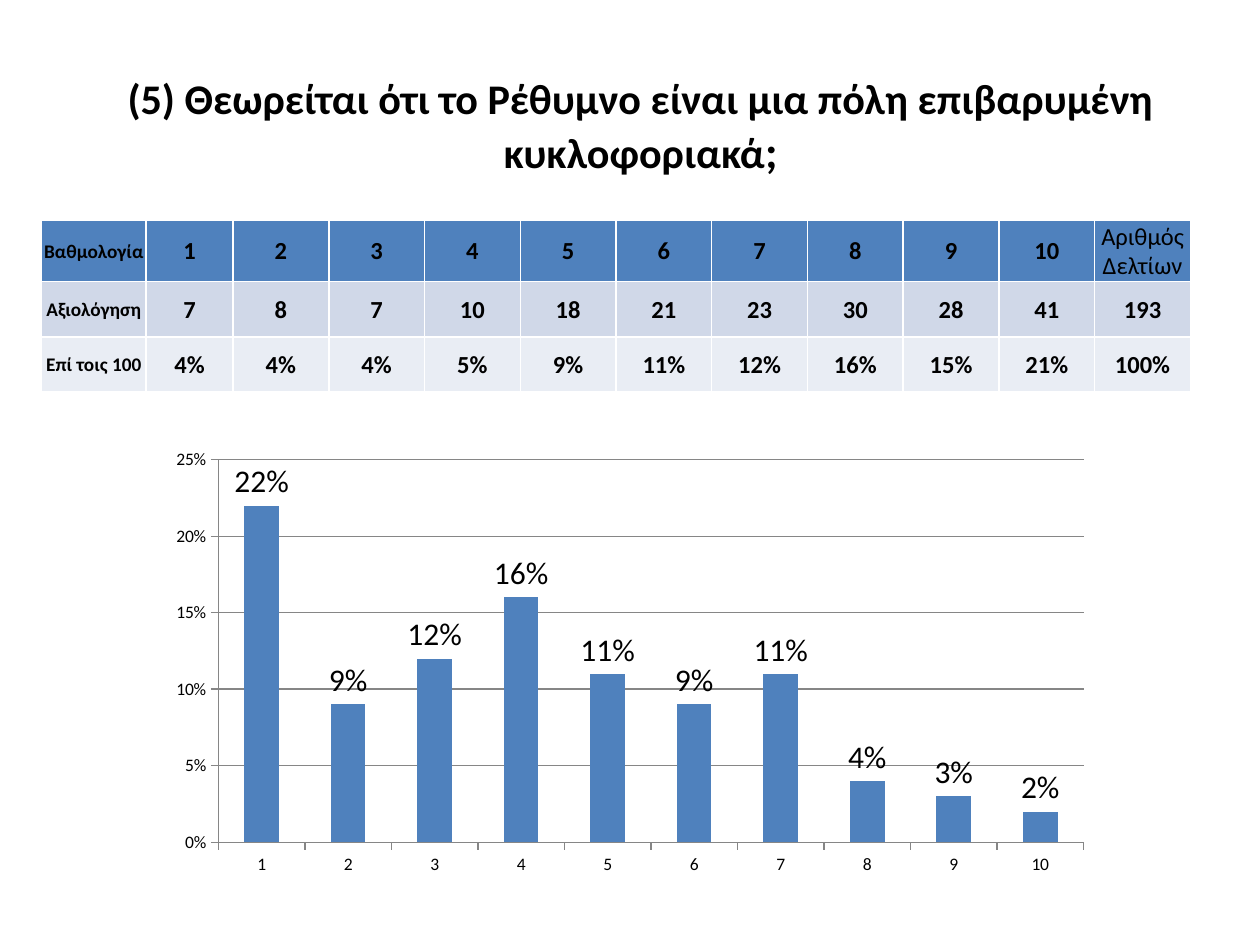
from dataclasses import dataclass

from pptx import Presentation
from pptx.chart.data import CategoryChartData
from pptx.dml.color import RGBColor
from pptx.enum.chart import XL_CHART_TYPE, XL_LABEL_POSITION, XL_TICK_MARK
from pptx.enum.text import MSO_ANCHOR, PP_ALIGN
from pptx.util import Inches, Pt

CENTER = PP_ALIGN.CENTER
MIDDLE = MSO_ANCHOR.MIDDLE
COLUMNS = XL_CHART_TYPE.COLUMN_CLUSTERED
OUTSIDE = XL_TICK_MARK.OUTSIDE
ABOVE = XL_LABEL_POSITION.OUTSIDE_END


@dataclass(frozen=True)
class Theme:
    """Colours, font and type sizes of the slide."""
    font: str = "Calibri"
    ink: RGBColor = RGBColor(0, 0, 0)
    blue: RGBColor = RGBColor(0x4F, 0x81, 0xBD)
    grey: RGBColor = RGBColor(0x86, 0x86, 0x86)
    bands: tuple = (blue, RGBColor(0xD0, 0xD8, 0xE8), RGBColor(0xE9, 0xED, 0xF4))
    title: float = 24.1
    mark: float = 25.9
    head: float = 11
    cell: float = 14
    axis: float = 10
    label: float = 18


THEME = Theme()
TITLE = "(5) Θεωρείται ότι το Ρέθυμνο είναι μια πόλη επιβαρυμένη κυκλοφοριακά"
SCORES = [str(n) for n in range(1, 11)]
ROWS = [
    ["Βαθμολογία", *SCORES, "Αριθμός Δελτίων"],
    ["Αξιολόγηση", "7", "8", "7", "10", "18", "21", "23", "30", "28", "41", "193"],
    ["Επί τοις 100", "4%", "4%", "4%", "5%", "9%", "11%", "12%", "16%", "15%",
     "21%", "100%"],
]
WIDTHS = [0.83, 0.69] + [0.76] * 10
SHARES = [0.22, 0.09, 0.12, 0.16, 0.11, 0.09, 0.11, 0.04, 0.03, 0.02]


def style(font, size, bold=False):
    """Give a font the theme's face and ink."""
    font.name = THEME.font
    font.size = Pt(size)
    font.bold = bold
    font.color.rgb = THEME.ink


def add_title(slide, box):
    """Place the question in the title placeholder."""
    title = slide.shapes.title
    title.left, title.top, title.width, title.height = map(Inches, box)
    frame = title.text_frame
    frame.word_wrap = True
    frame.vertical_anchor = MIDDLE
    frame.text = TITLE
    para = frame.paragraphs[0]
    para.alignment = CENTER
    para.add_run().text = ";"
    for run, size in zip(para.runs, (THEME.title, THEME.mark)):
        style(run.font, size, True)


def fill_cell(cell, text, fill, size, bold):
    """Write one centred cell on its band colour."""
    cell.fill.solid()
    cell.fill.fore_color.rgb = fill
    cell.vertical_anchor = MIDDLE
    cell.margin_left = cell.margin_right = cell.margin_top = Inches(0.01)
    cell.margin_bottom = 0
    cell.text = text
    para = cell.text_frame.paragraphs[0]
    para.alignment = CENTER
    style(para.runs[0].font, size, bold)


def add_grid(slide, box):
    """Place the table of scores."""
    grid = slide.shapes.add_table(len(ROWS), len(WIDTHS), *map(Inches, box)).table
    for col, width in zip(grid.columns, WIDTHS):
        col.width = Inches(width)
    last = len(WIDTHS) - 1
    for r, (row, fill) in enumerate(zip(ROWS, THEME.bands)):
        for c, text in enumerate(row):
            size = THEME.cell if c else THEME.head
            fill_cell(grid.cell(r, c), text, fill, size, (r, c) != (0, last))


def add_bars(slide, box):
    """Place the column chart of shares."""
    data = CategoryChartData(number_format="0%")
    data.categories = SCORES
    data.add_series("Series 1", SHARES)
    chart = slide.shapes.add_chart(COLUMNS, *map(Inches, box), data).chart
    chart.has_legend = False
    chart.has_title = False
    style(chart.font, THEME.axis)
    for axis in (chart.category_axis, chart.value_axis):
        axis.major_tick_mark = OUTSIDE
        axis.format.line.color.rgb = THEME.grey
    scale = chart.value_axis
    scale.minimum_scale, scale.maximum_scale, scale.major_unit = 0, 0.25, 0.05
    scale.has_major_gridlines = True
    scale.major_gridlines.format.line.color.rgb = THEME.grey
    scale.tick_labels.number_format = "0%"
    scale.tick_labels.number_format_is_linked = False
    plot = chart.plots[0]
    plot.gap_width = 150
    plot.vary_by_categories = False
    bars = plot.series[0]
    bars.format.fill.solid()
    bars.format.fill.fore_color.rgb = THEME.blue
    labels = bars.data_labels
    labels.show_value = True
    labels.number_format = "0%"
    labels.number_format_is_linked = False
    labels.position = ABOVE
    style(labels.font, THEME.label)


def main():
    """Build and save the slide."""
    deck = Presentation()
    deck.slide_width, deck.slide_height = Inches(10), Inches(7.5)
    slide = deck.slides.add_slide(deck.slide_layouts[5])
    add_grid(slide, (0.33, 1.75, 9.17, 1.32))
    add_title(slide, (0.5, 0.58, 9.17, 0.83))
    add_bars(slide, (1.25, 3.5, 7.5, 3.51))
    deck.save("out.pptx")


if __name__ == "__main__":
    main()
